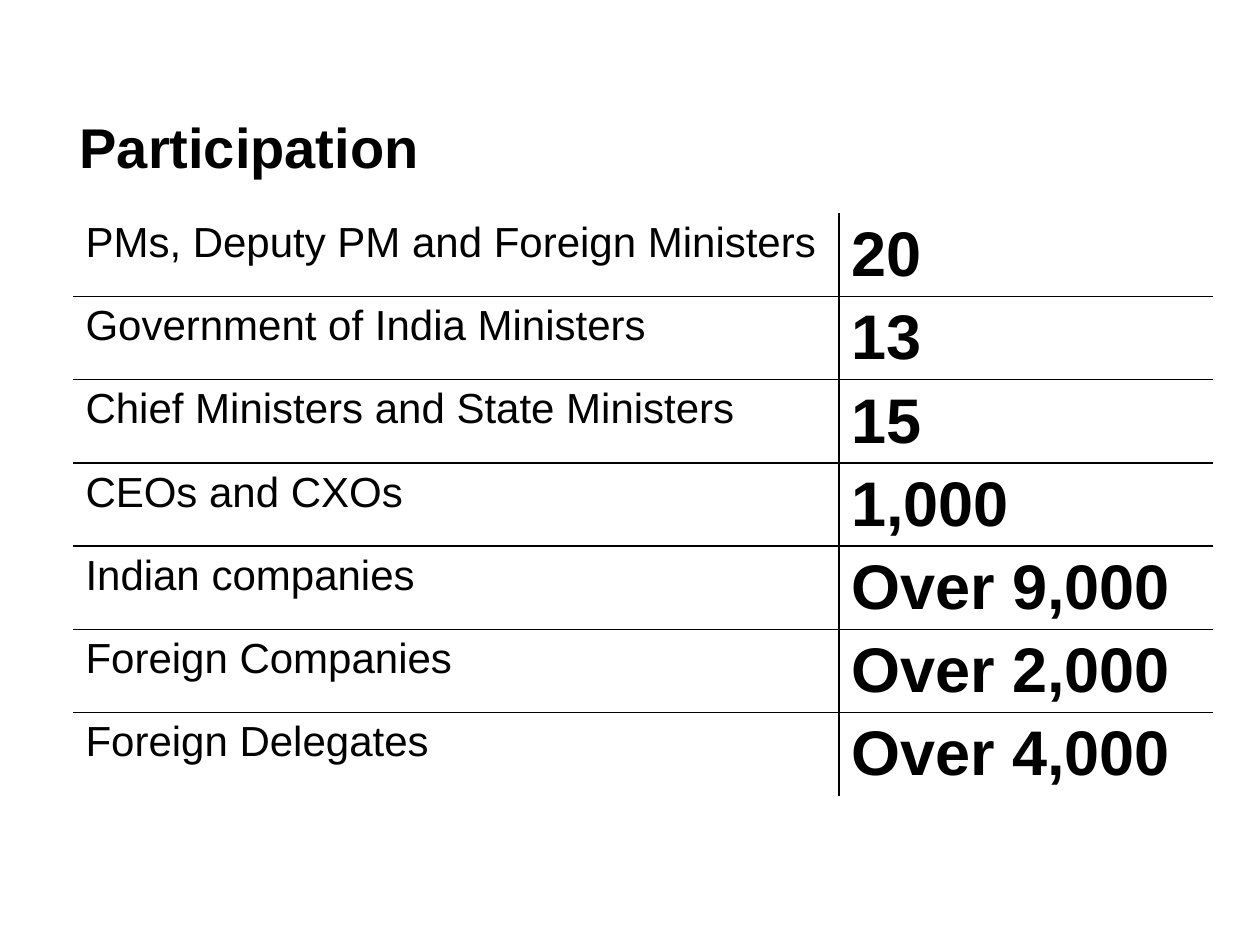
from lxml import etree
from pptx import Presentation
from pptx import util as u
from pptx.dml import color
from pptx.enum import text
from pptx.oxml import ns

HUES = {"ink": "000000"}
ROWS = [
    ("PMs, Deputy PM and Foreign Ministers", "20"),
    ("Government of India Ministers", "13"),
    ("Chief Ministers and State Ministers", "15"),
    ("CEOs and CXOs", "1,000"),
    ("Indian companies", "Over 9,000"),
    ("Foreign Companies", "Over 2,000"),
    ("Foreign Delegates", "Over 4,000"),
]
WIDTHS = [15.44, 7.54]
HIGH = 1.67
PLAIN = "{2D5ABB26-0587-4C30-8999-92F81FD0307C}"


def style(frame, size, bold):
    for run in frame.paragraphs[0].runs:
        run.font.name = "Arial"
        run.font.size = u.Pt(size)
        run.font.bold = bold
        run.font.color.rgb = color.RGBColor.from_string(HUES["ink"])


def rule(cell, side):
    line = etree.SubElement(cell._tc.get_or_add_tcPr(), ns.qn("a:ln" + side), w=str(u.Pt(1)))
    fill = etree.SubElement(line, ns.qn("a:solidFill"))
    etree.SubElement(fill, ns.qn("a:srgbClr"), val=HUES["ink"])


deck = Presentation()
deck.slide_width, deck.slide_height = u.Cm(25.4), u.Cm(19.05)
slide = deck.slides.add_slide(deck.slide_layouts[5])

title = slide.shapes.title
title.left, title.top = u.Cm(1.35), u.Cm(2.06)
title.width, title.height = u.Cm(22.86), u.Cm(1.93)
frame = title.text_frame
frame.text = "Participation"
frame.vertical_anchor = text.MSO_ANCHOR.MIDDLE
frame.paragraphs[0].alignment = text.PP_ALIGN.LEFT
frame.paragraphs[0].line_spacing = 0.9
style(frame, 32, True)

table = slide.shapes.add_table(
    len(ROWS), len(WIDTHS), u.Cm(1.47), u.Cm(4.3),
    u.Cm(sum(WIDTHS)), u.Cm(HIGH * len(ROWS))).table
table.first_row = table.horz_banding = False
table._tbl.tblPr.find(ns.qn("a:tableStyleId")).text = PLAIN
for col, width in zip(table.columns, WIDTHS):
    col.width = u.Cm(width)

for r, row in enumerate(ROWS):
    table.rows[r].height = u.Cm(HIGH)
    for c, words in enumerate(row):
        cell = table.cell(r, c)
        cell.text_frame.text = words
        style(cell.text_frame, (24, 36)[c], c == 1)
        rule(cell, "RL"[c])
        if r > 0:
            rule(cell, "T")
        if r < len(ROWS) - 1:
            rule(cell, "B")
        cell.fill.background()

deck.save("out.pptx")
